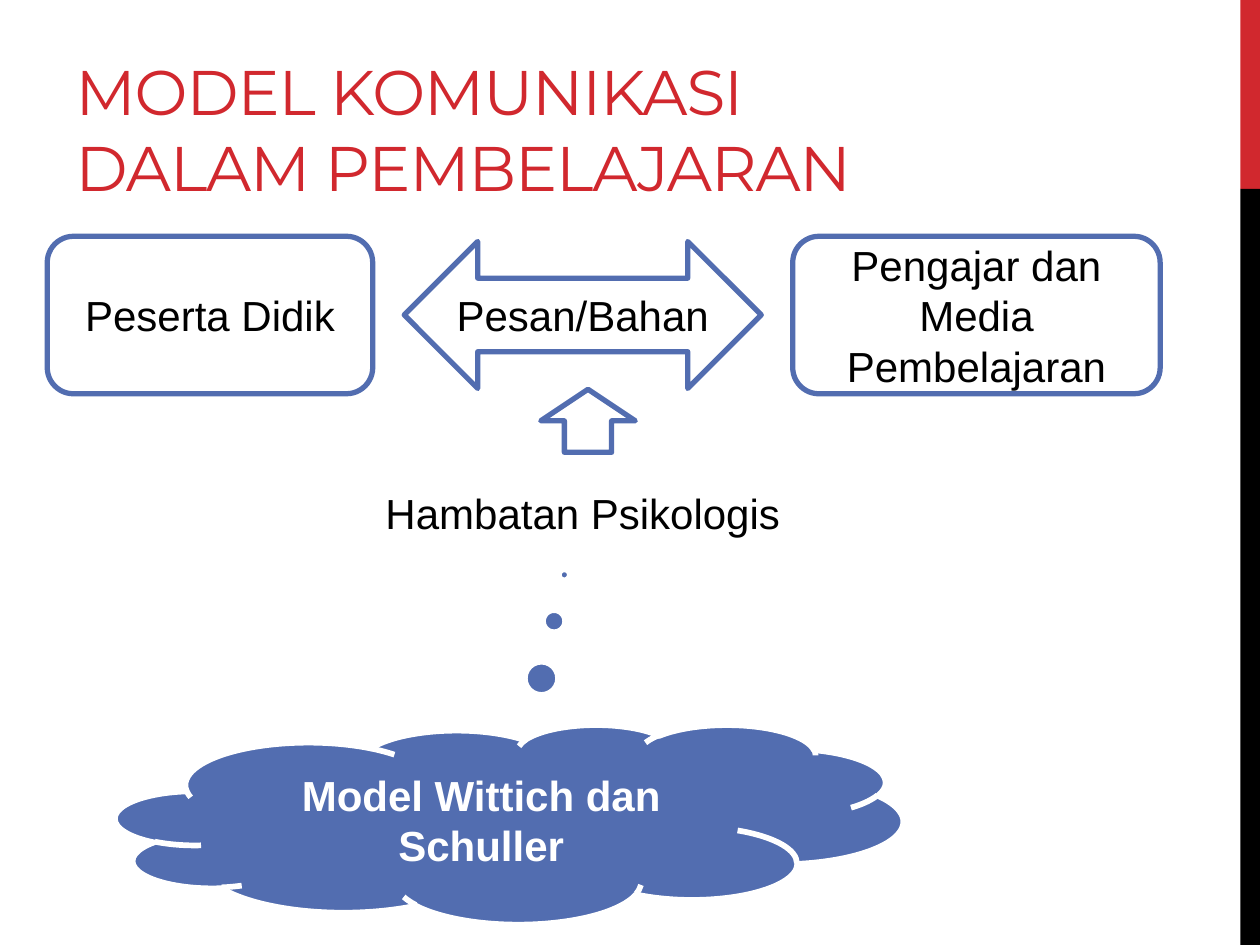
from pptx import Presentation
from pptx.dml.color import RGBColor
from pptx.enum import shapes, text
from pptx.util import Pt

RED = RGBColor(0xD1, 0x28, 0x2E)
BLUE = RGBColor(0x52, 0x6D, 0xB0)
BLACK = RGBColor(0, 0, 0)
WHITE = RGBColor(0xFF, 0xFF, 0xFF)

SHAPE = shapes.MSO_SHAPE
CENTER = text.PP_ALIGN.CENTER
MIDDLE = text.MSO_ANCHOR.MIDDLE
BODY = {"name": "Arial", "size": Pt(24), "bold": False}


def write(frame, words, font, color, align, anchor):
    frame.word_wrap = True
    frame.vertical_anchor = anchor
    para = frame.paragraphs[0]
    para.alignment = align
    span = para.add_run()
    span.text = words
    for key, value in font.items():
        setattr(span.font, key, value)
    span.font.color.rgb = color
    return span


def add_block(page, kind, box, fill, line=None, width=3):
    block = page.shapes.add_shape(kind, *map(Pt, box))
    block.shadow.inherit = False
    block.fill.solid()
    block.fill.fore_color.rgb = fill
    if line is None:
        block.line.fill.background()
    else:
        block.line.color.rgb = line
        block.line.width = Pt(width)
    return block


def add_sidebar(page, box):
    left, top, width, height = box
    red_height = height / 5
    add_block(page, SHAPE.RECTANGLE, (left, top, width, red_height), RED)
    add_block(page, SHAPE.RECTANGLE,
              (left, top + red_height, width, height - red_height), BLACK)


def add_title(page, box):
    title = page.shapes.title
    title.left, title.top, title.width, title.height = map(Pt, box)
    title.text_frame.auto_size = text.MSO_AUTO_SIZE.NONE
    span = write(title.text_frame, "MODEL KOMUNIKASI DALAM PEMBELAJARAN",
                 {"name": "Montserrat", "size": Pt(36)}, RED,
                 text.PP_ALIGN.LEFT, text.MSO_ANCHOR.BOTTOM)
    span.font._element.set("spc", "-60")


def add_exchange(page, box):
    left, top, width, height = box
    learner, message, teacher, gap = 186, 204, 210, 18
    arrow_inset = 3
    teacher_left = left + width - teacher
    parts = (
        (SHAPE.ROUNDED_RECTANGLE, "Peserta Didik", left, learner, 0),
        (SHAPE.LEFT_RIGHT_ARROW, "Pesan/Bahan", left + learner + gap, message, arrow_inset),
        (SHAPE.ROUNDED_RECTANGLE, "Pengajar dan Media Pembelajaran", teacher_left, teacher, 0),
    )
    for kind, words, part_left, part_width, inset in parts:
        part = add_block(page, kind,
                         (part_left, top + inset, part_width, height - 2 * inset),
                         WHITE, BLUE)
        write(part.text_frame, words, BODY, BLACK, CENTER, MIDDLE)


def add_barrier(page, box):
    left, top, width, height = box
    label_height = 36
    add_block(page, SHAPE.UP_ARROW, (left + 159, top, 54, 36), WHITE, BLUE)
    label = page.shapes.add_textbox(
        *map(Pt, (left, top + height - label_height, width, label_height)))
    write(label.text_frame, "Hambatan Psikologis", BODY, BLACK, CENTER,
          text.MSO_ANCHOR.TOP)


def add_source_cloud(page, box):
    cloud = add_block(page, SHAPE.CLOUD_CALLOUT, box, BLUE, WHITE, 3.25)
    cloud.adjustments[0] = 0.07
    cloud.adjustments[1] = -1.25
    write(cloud.text_frame, "Model Wittich dan Schuller",
          BODY | {"bold": True}, WHITE, CENTER, MIDDLE)


def main():
    deck = Presentation()
    deck.slide_width, deck.slide_height = Pt(720), Pt(540)
    page = deck.slides.add_slide(deck.slide_layouts[5])
    add_sidebar(page, (708.75, 0, 11.25, 540))
    add_title(page, (36, 12, 492, 108))
    add_exchange(page, (27, 135, 636, 90))
    add_barrier(page, (150, 222.5, 366, 88.5))
    add_source_cloud(page, (66, 414, 450, 114))
    deck.save("out.pptx")


if __name__ == "__main__":
    main()
